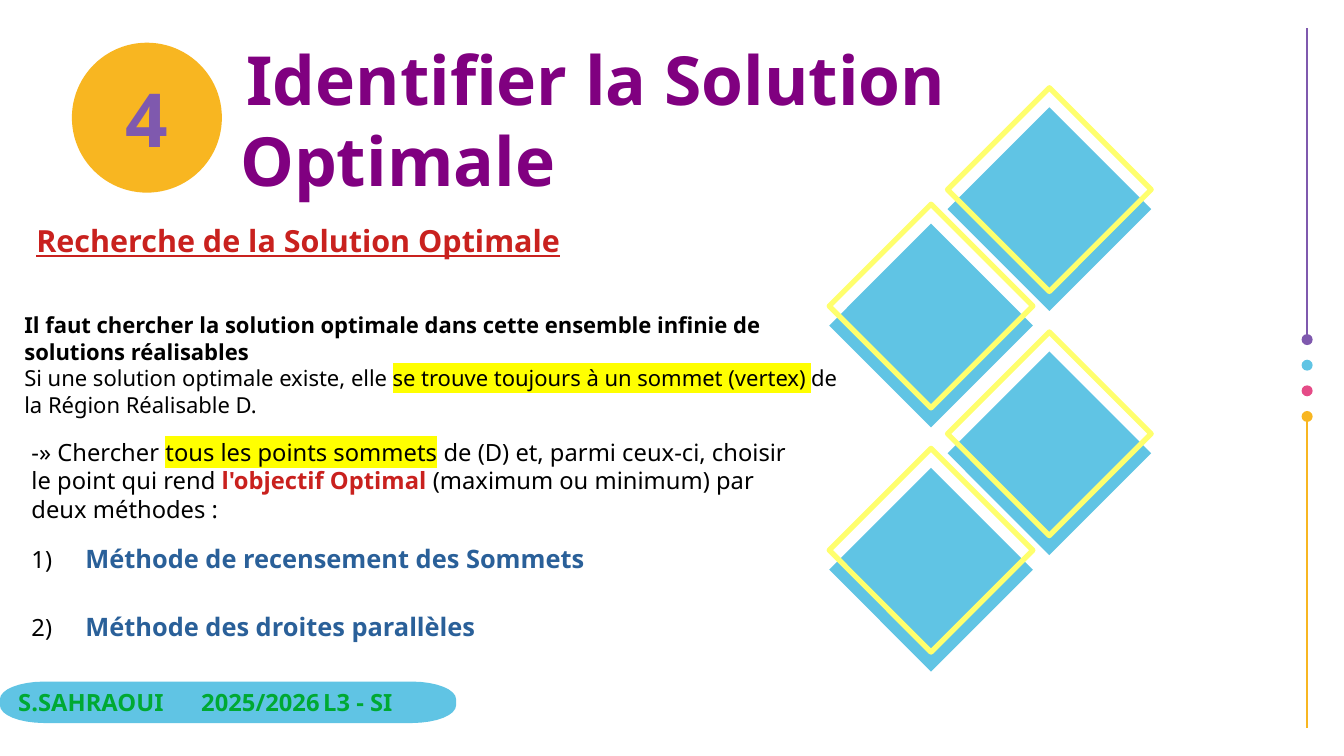
"""Build the slide that introduces the search for the optimal solution."""
from dataclasses import dataclass
from math import cos, pi, sin

from lxml import etree
from pptx import Presentation
from pptx.dml.color import RGBColor
from pptx.enum.shapes import MSO_CONNECTOR, MSO_SHAPE
from pptx.enum.text import MSO_ANCHOR, PP_ALIGN
from pptx.oxml.ns import qn
from pptx.util import Inches, Pt

STRAIGHT = MSO_CONNECTOR.STRAIGHT
DIAMOND, OVAL = MSO_SHAPE.DIAMOND, MSO_SHAPE.OVAL
TOP, MIDDLE = MSO_ANCHOR.TOP, MSO_ANCHOR.MIDDLE
LEFT, CENTER = PP_ALIGN.LEFT, PP_ALIGN.CENTER

WIDTH, HEIGHT = Inches(11.02), Inches(6.2)
FONT = "Noto Sans"
COLORS = {
    "sky": "60C4E4", "lemon": "FFFF6D", "pink": "E54B87", "amber": "F8B621",
    "violet": "7F59AE", "purple": "800080", "red": "C9211E", "blue": "2A6099",
    "green": "00A933", "black": "000000", "yellow": "FFFF00",
}


@dataclass
class Box:
    """Place and size in percent of the slide's width and height."""
    left: float
    top: float
    width: float
    height: float

    def lengths(self) -> tuple[int, int, int, int]:
        """Return left, top, width and height as slide lengths."""
        return across(self.left), down(self.top), across(self.width), down(self.height)


@dataclass
class Words:
    """A stretch of text in one style."""
    text: str
    size: float
    color: str = "black"
    bold: bool = False
    underline: bool = False
    highlight: str = ""


@dataclass
class Lines:
    """A paragraph, with its indents and tab stops in percent of the width."""
    words: list[Words]
    align: int = LEFT
    margin: float = 0
    indent: float = 0
    before: float = 0
    after: float = 0
    numbered: bool = False
    tabs: tuple[float, ...] = ()


@dataclass
class TextArea:
    """A text box with its paragraphs."""
    box: Box
    paragraphs: list[Lines]
    anchor: int = TOP
    padded: bool = True


def across(percent: float) -> int:
    """Return a share of the slide's width."""
    return round(WIDTH * percent / 100)


def down(percent: float) -> int:
    """Return a share of the slide's height."""
    return round(HEIGHT * percent / 100)


def rgb(name: str) -> RGBColor:
    """Return a named colour."""
    return RGBColor.from_string(COLORS[name])


def add_color(parent, tag: str, name: str) -> etree.Element:
    """Append an element that holds a named colour."""
    element = etree.SubElement(parent, qn(tag))
    etree.SubElement(element, qn("a:srgbClr"), val=COLORS[name])
    return element


def write(shape, paragraphs: list[Lines], anchor: int) -> None:
    """Fill a shape with formatted paragraphs."""
    frame = shape.text_frame
    frame.word_wrap, frame.vertical_anchor = True, anchor
    for index, lines in enumerate(paragraphs):
        paragraph = frame.add_paragraph() if index else frame.paragraphs[0]
        paragraph.alignment = lines.align
        paragraph.space_before, paragraph.space_after = Pt(lines.before), Pt(lines.after)
        properties = paragraph._p.get_or_add_pPr()
        properties.set("marL", str(across(lines.margin)))
        properties.set("indent", str(across(lines.indent)))
        if lines.numbered:
            add_color(properties, "a:buClr", "black")
            etree.SubElement(properties, qn("a:buAutoNum"), type="arabicParenR")
        if lines.tabs:
            stops = etree.SubElement(properties, qn("a:tabLst"))
            for stop in lines.tabs:
                etree.SubElement(stops, qn("a:tab"), pos=str(across(stop)), algn="l")
        for words in lines.words:
            run = paragraph.add_run()
            run.text = words.text
            font = run.font
            font.name, font.size, font.bold = FONT, Pt(words.size), words.bold
            font.underline = words.underline
            font.color.rgb = rgb(words.color)
            if words.highlight:
                style = run._r.get_or_add_rPr()
                mark = add_color(style, "a:highlight", words.highlight)
                style.find(qn("a:solidFill")).addnext(mark)


def paint(shape, color: str) -> None:
    """Give a shape a plain fill without line or shadow."""
    shape.shadow.inherit = False
    shape.fill.solid()
    shape.fill.fore_color.rgb = rgb(color)
    shape.line.fill.background()


def add_filled(slide, kind: int, box: Box, color: str):
    """Add a preset shape in one colour."""
    shape = slide.shapes.add_shape(kind, *box.lengths())
    paint(shape, color)
    return shape


def add_diamonds(slide) -> None:
    """Add two rows of paired diamonds, then their raised outlines."""
    boxes = [Box(70.5 - 8.8 * column, 14.19 + 32.3 * row + 15.4 * column, 15.15, 26.94)
             for row in range(2) for column in range(2)]
    for box in boxes:
        add_filled(slide, DIAMOND, box, "sky")
    for box in boxes:
        box.top -= 2.58
        outline = slide.shapes.add_shape(DIAMOND, *box.lengths())
        outline.shadow.inherit = False
        outline.fill.background()
        outline.line.color.rgb = rgb("lemon")
        outline.line.width = Pt(3.12)
        etree.SubElement(outline.line._get_or_add_ln(), qn("a:round"))


def add_side_rail(slide) -> None:
    """Add the four dots and the two lines at the right edge."""
    for index, color in enumerate(("violet", "sky", "pink", "amber")):
        add_filled(slide, OVAL, Box(96.85, 44.2 + 3.39 * index, 0.82, 1.45), color)
    for start, end, color in ((55.16, 96.29, "amber"), (3.71, 45, "violet")):
        x = across(97.26)
        rail = slide.shapes.add_connector(STRAIGHT, x, down(start), x, down(end))
        rail.line.color.rgb = rgb(color)
        rail.line.width = Pt(0.82)
        etree.SubElement(rail._element.spPr, qn("a:effectLst"))


def add_pill(slide, box: Box, corner_width: float, corner_height: float, color: str):
    """Add a bar whose corners are quarters of an ellipse."""
    steps, points = 8, []
    for quarter, (right, bottom) in enumerate(((1, 1), (0, 1), (0, 0), (1, 0))):
        x = box.left + (box.width - corner_width if right else corner_width)
        y = box.top + (box.height - corner_height if bottom else corner_height)
        for step in range(steps + 1):
            angle = (quarter + step / steps) * pi / 2
            points.append((across(x + corner_width * cos(angle)),
                           down(y + corner_height * sin(angle))))
    builder = slide.shapes.build_freeform(*points[0])
    builder.add_line_segments(points[1:], close=True)
    pill = builder.convert_to_shape()
    paint(pill, color)
    return pill


def method(name: str) -> Lines:
    """Return a numbered paragraph that names a method."""
    return Lines([Words(" ", 14), Words(name, 15, "blue", True)], margin=3.55,
                 indent=-3.55, before=11.9, after=9.9, numbered=True)


TEXT_AREAS = [
    TextArea(Box(17.88, 3.55, 52.9, 24.35), [
        Lines([Words("Identifier la Solution Optimale", 40, "purple", True)], indent=0.46),
    ], MIDDLE, False),
    TextArea(Box(1.81, 41.24, 60.71, 14.1), [
        Lines([Words("Il faut chercher la solution optimale dans cette ensemble infinie de "
                     "solutions réalisables", 13, bold=True)]),
        Lines([Words("Si une solution optimale existe, elle ", 13),
               Words("se trouve toujours à un sommet (vertex) ", 13, highlight="yellow"),
               Words("de la Région Réalisable D.", 13)]),
    ], padded=False),
    TextArea(Box(1.45, 57.1, 59.26, 33.55), [
        Lines([Words("-» Chercher ", 14),
               Words("tous les points sommets", 14, highlight="yellow"),
               Words(" de (D) et, parmi ceux-ci, choisir le point qui rend ", 14),
               Words("l'objectif Optimal", 14, "red", True),
               Words(" (maximum ou minimum) par deux méthodes :", 14)]),
        method("Méthode de recensement des Sommets"),
        method("Méthode des droites parallèles"),
    ]),
    TextArea(Box(1.81, 28.55, 44.65, 9.52), [
        Lines([Words("Recherche de la Solution Optimale", 18, "red", True, True)])]),
]


def main() -> None:
    """Build and save the presentation."""
    presentation = Presentation()
    presentation.slide_width, presentation.slide_height = WIDTH, HEIGHT
    slide = presentation.slides.add_slide(presentation.slide_layouts[6])
    add_diamonds(slide)
    add_side_rail(slide)
    badge = add_filled(slide, OVAL, Box(5.35, 5.65, 11.16, 19.84), "amber")
    write(badge, [Lines([Words("4", 44, "violet", True)], CENTER)], MIDDLE)
    for area in TEXT_AREAS:
        text_box = slide.shapes.add_textbox(*area.box.lengths())
        if not area.padded:
            frame = text_box.text_frame
            frame.margin_left = frame.margin_right = frame.margin_top = frame.margin_bottom = 0
        write(text_box, area.paragraphs, area.anchor)
    footer = add_pill(slide, Box(0, 90.16, 33.94, 5.48), 3.27, 2.34, "sky")
    footer.text_frame.margin_left = across(1.36)
    write(footer, [Lines([Words("S.SAHRAOUI\t2025/2026\tL3 - SI", 14, "green", True)],
                         tabs=(14.93, 26.01))], MIDDLE)
    presentation.save("out.pptx")


if __name__ == "__main__":
    main()
